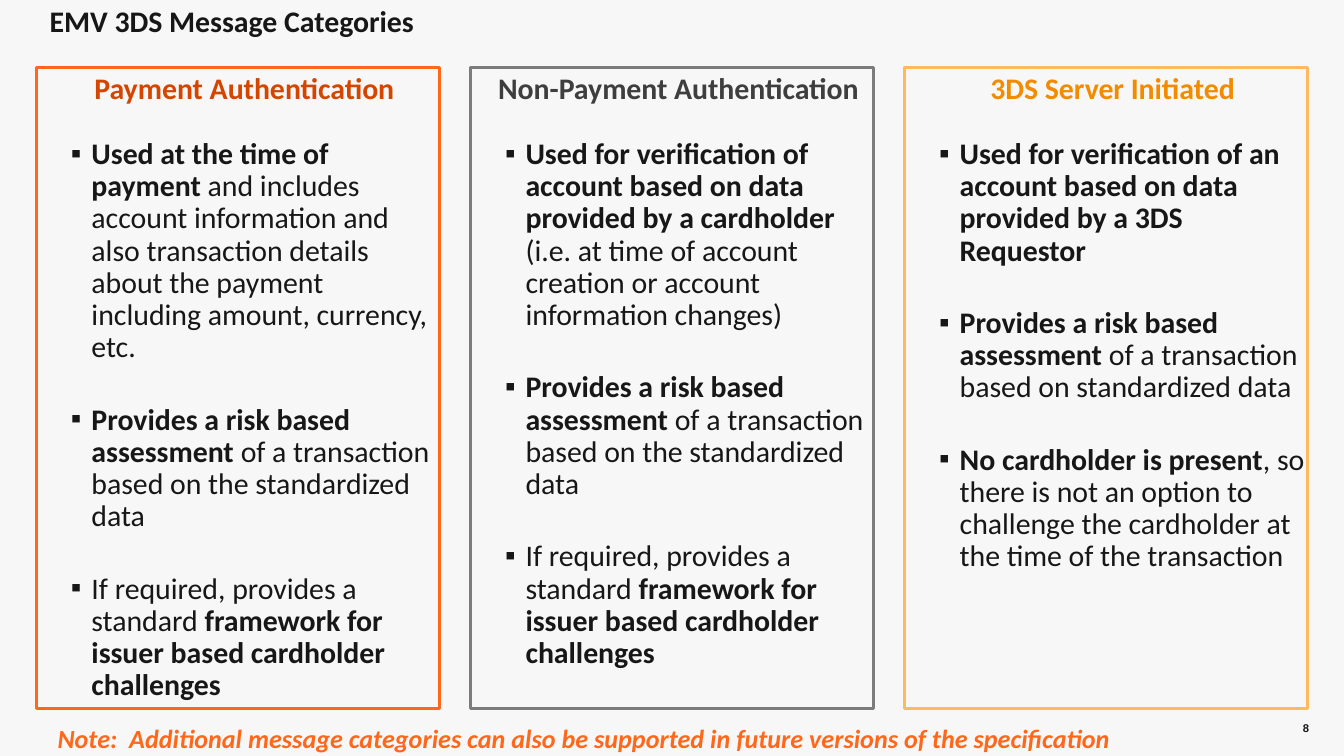
"""Build the slide comparing the three EMV 3DS message categories."""
from dataclasses import dataclass
from typing import Any, NamedTuple

from lxml import etree
from pptx import Presentation
from pptx.dml.color import RGBColor
from pptx.enum.shapes import MSO_SHAPE
from pptx.enum.text import MSO_ANCHOR, MSO_AUTO_SIZE, PP_ALIGN
from pptx.oxml.ns import qn
from pptx.util import Pt

RECTANGLE = MSO_SHAPE.RECTANGLE
TOP, MIDDLE = MSO_ANCHOR.TOP, MSO_ANCHOR.MIDDLE
LEFT, CENTER, RIGHT = PP_ALIGN.LEFT, PP_ALIGN.CENTER, PP_ALIGN.RIGHT
NO_AUTOFIT = MSO_AUTO_SIZE.NONE
TITLE_ONLY = 5


@dataclass(frozen=True)
class Theme:
    """Colours, fonts and type sizes of the slide."""
    background: str = "F7F7F7"
    ink: str = "171717"
    accent: str = "FF671B"
    font: str = "Calibri"
    number_font: str = "Arial"
    body_size: float = 16
    note_size: float = 14
    number_size: float = 6


class Span(NamedTuple):
    """A stretch of text with one weight."""
    text: str
    bold: bool = False


class Frame(NamedTuple):
    """A position and size in points."""
    left: float
    top: float
    width: float
    height: float


@dataclass(frozen=True)
class Category:
    """A message category shown as an outlined panel."""
    heading: str
    heading_color: str
    line_color: str
    bullets: list[list[Span]]


THEME = Theme()
FIRST_PANEL = Frame(19.44, 36, 216, 343.44)
PANEL_PITCH = 232.56
LINE_SPACING = 0.9
FIRST_BULLET_GAP, BULLET_GAP = 17.5, 21.5
BULLET_MARGIN, BULLET_INDENT = 22.5, -11

RISK = Span("Provides a risk based assessment ", True)
STANDARDIZED = Span("of a transaction based on the standardized data")
CHALLENGE = [Span("If required, provides a standard "),
             Span("framework for issuer based cardholder challenges", True)]

CATEGORIES = [
    Category("Payment Authentication", "D44600", THEME.accent, [
        [Span("Used at the time of payment ", True),
         Span("and includes account information and also transaction details "
              "about the payment including amount, currency, etc.")],
        [RISK, STANDARDIZED],
        CHALLENGE,
    ]),
    Category("Non-Payment Authentication", "3E3E3E", "7C7C7C", [
        [Span("Used for verification of account based on data provided by a cardholder ", True),
         Span("(i.e. at time of account creation or account information changes)")],
        [RISK, STANDARDIZED],
        CHALLENGE,
    ]),
    Category("3DS Server Initiated", "F38B00", "FFBA5F", [
        [Span("Used for verification of an account based on data provided by a 3DS Requestor", True)],
        [RISK, Span("of a transaction based on standardized data")],
        [Span("No cardholder is present", True),
         Span(", so there is not an option to challenge the cardholder at the time of the transaction")],
    ]),
]


def set_values(target: Any, **values: Any) -> None:
    """Set each named attribute on the target."""
    for name, value in values.items():
        setattr(target, name, value)


def place(shape: Any, frame: Frame) -> None:
    """Move and size a shape."""
    set_values(shape, **{name: Pt(value) for name, value in frame._asdict().items()})


def set_up_text(shape: Any, anchor: Any = TOP, right_inset: float = 7.2) -> Any:
    """Prepare a wrapping text frame and return it."""
    text_frame = shape.text_frame
    set_values(text_frame, auto_size=NO_AUTOFIT, word_wrap=True, vertical_anchor=anchor,
               margin_left=Pt(7.2), margin_right=Pt(right_inset),
               margin_top=Pt(3.6), margin_bottom=Pt(3.6))
    return text_frame


def write(para: Any, spans: list[Span], color: str = THEME.ink, size: float = THEME.body_size,
          font: str = THEME.font, italic: bool = False, align: Any = LEFT,
          spacing: float = LINE_SPACING, gap: float = 0) -> None:
    """Write formatted spans into a paragraph."""
    set_values(para, alignment=align, line_spacing=spacing, space_before=Pt(gap))
    for span in spans:
        run = para.add_run()
        run.text = span.text
        set_values(run.font, name=font, size=Pt(size), bold=span.bold, italic=italic)
        run.font.color.rgb = RGBColor.from_string(color)


def add_bullet(para: Any) -> None:
    """Give a paragraph a square bullet with a hanging indent."""
    properties = para._p.get_or_add_pPr()
    properties.set("marL", str(Pt(BULLET_MARGIN)))
    properties.set("indent", str(Pt(BULLET_INDENT)))
    etree.SubElement(properties, qn("a:buFont")).set("typeface", THEME.number_font)
    etree.SubElement(properties, qn("a:buChar")).set("char", "▪")


def draw_panel(slide: Any, category: Category, frame: Frame) -> None:
    """Draw one category panel with its heading and bullets."""
    panel = slide.shapes.add_shape(RECTANGLE, 0, 0, 0, 0)
    place(panel, frame)
    panel.shadow.inherit = False
    panel.fill.background()
    panel.line.color.rgb = RGBColor.from_string(category.line_color)
    panel.line.width = Pt(1.5)
    text_frame = set_up_text(panel, right_inset=0)
    write(text_frame.paragraphs[0], [Span(category.heading, True)],
          color=category.heading_color, align=CENTER)
    for index, spans in enumerate(category.bullets):
        para = text_frame.add_paragraph()
        add_bullet(para)
        write(para, spans, gap=BULLET_GAP if index else FIRST_BULLET_GAP)


def draw_label(slide: Any, text: str, frame: Frame, anchor: Any = TOP, **style: Any) -> None:
    """Draw a single-paragraph bold text box."""
    box = slide.shapes.add_textbox(0, 0, 0, 0)
    place(box, frame)
    text_frame = set_up_text(box, anchor, right_inset=0 if anchor == MIDDLE else 7.2)
    write(text_frame.paragraphs[0], [Span(text, True)], **style)


def main() -> None:
    """Build and save the deck."""
    deck = Presentation()
    set_values(deck, slide_width=Pt(720), slide_height=Pt(405))
    slide = deck.slides.add_slide(deck.slide_layouts[TITLE_ONLY])
    slide.background.fill.solid()
    slide.background.fill.fore_color.rgb = RGBColor.from_string(THEME.background)

    title = slide.shapes.title
    place(title, Frame(19.44, 0, 432.72, 24.48))
    write(set_up_text(title).paragraphs[0], [Span("EMV 3DS Message Categories", True)])

    for index, category in enumerate(CATEGORIES):
        left = FIRST_PANEL.left + index * PANEL_PITCH
        draw_panel(slide, category, FIRST_PANEL._replace(left=left))

    draw_label(slide, "Note:  Additional message categories can also be supported "
               "in future versions of the specification", Frame(23.76, 385.2, 630.72, 43.92),
               color=THEME.accent, size=THEME.note_size, italic=True)
    draw_label(slide, "8", Frame(666.72, 379.44, 34.56, 21.6), anchor=MIDDLE,
               size=THEME.number_size, font=THEME.number_font, align=RIGHT, spacing=1.0)
    deck.save("out.pptx")


if __name__ == "__main__":
    main()
